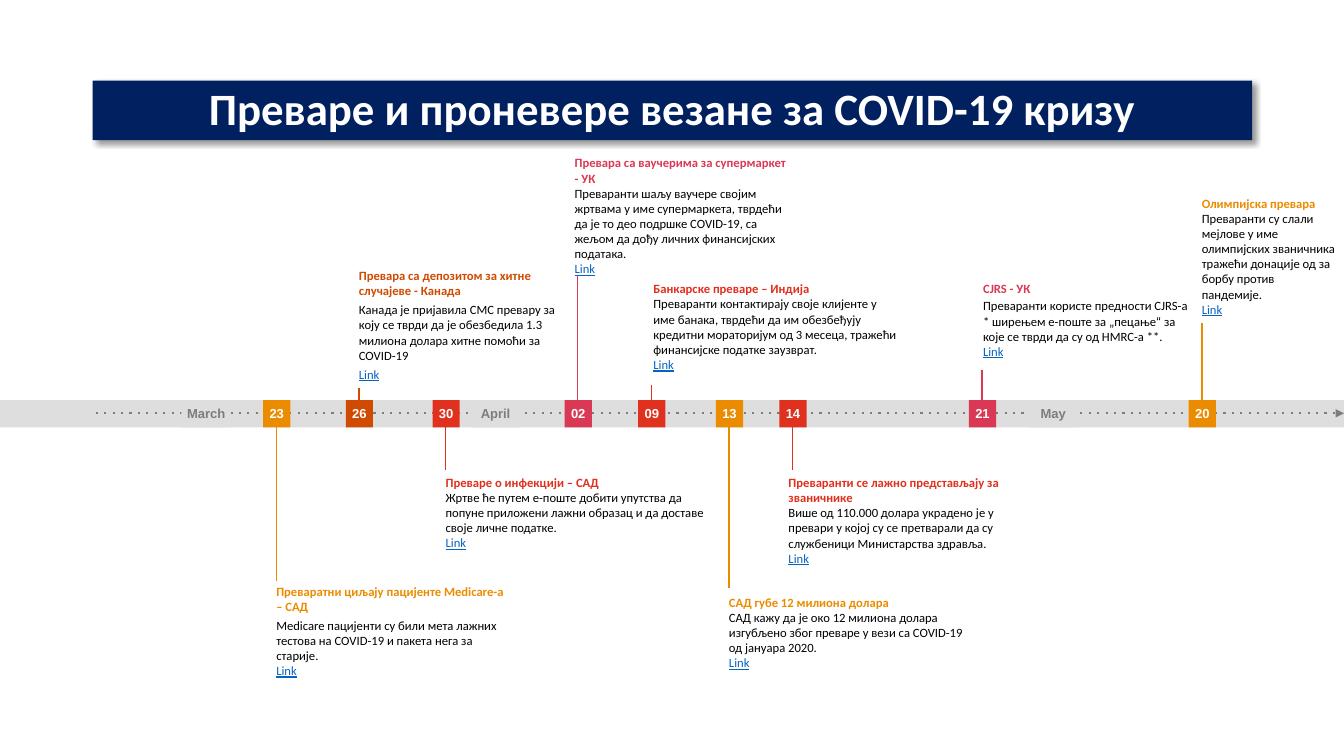
from lxml.etree import SubElement
from pptx import Presentation
from pptx.dml.color import RGBColor
from pptx.enum.shapes import MSO_CONNECTOR, MSO_SHAPE
from pptx.enum.text import MSO_ANCHOR, PP_ALIGN
from pptx.oxml.ns import qn
from pptx.util import Pt

PX = 9144  # 100 px to the inch
NAVY, WHITE, BLACK, LINK_BLUE = "002060", "FFFFFF", "000000", "0563C1"
BAND_GREY, TEXT_GREY = "DEDEDE", "7D7D7D"
AMBER, ORANGE, RED, ROSE = "EB8C00", "D04A02", "E0301E", "D93954"
BAND_TOP, BAND_HEIGHT, AXIS_Y = 397, 27, 410
BAND_BOTTOM = BAND_TOP + BAND_HEIGHT

months = [("March", 180), ("April", 467), ("May", 1020)]

# day, stem x, stem end y, colour, text box (left, top, width, height),
# space before body, space before link (None: same paragraph), title, body
events = [
    ("23", 274, 576, AMBER, (274, 579, 228, 94), 2.7, None,
     "Преваратни циљају пацијенте Medicare-а – САД",
     "Medicare пацијенти су били мета лажних тестова на COVID-19 и пакета нега за старије."),
    ("26", 356, 385, ORANGE, (356, 266, 203, 112), 2.7, 2.7,
     "Превара са депозитом за хитне случајеве - Канада",
     "Канада је пријавила СМС превару за коју се тврди да је обезбедила 1.3 "
     "милиона долара хитне помоћи за COVID-19"),
    ("30", 442, 466, RED, (442, 471, 256, 77), 0, None,
     "Преваре о инфекцији – САД",
     "Жртве ће путем е-поште добити упутства да попуне приложени лажни образац "
     "и да доставе своје личне податке."),
    ("02", 573, 274, ROSE, (570, 154, 213, 118), 0, None,
     "Превара са ваучерима за супермаркет - УК",
     "Преваранти шаљу ваучере својим жртвама у име супермаркета, тврдећи да је то део "
     "подршке COVID-19, са жељом да дођу личних финансијских података."),
    ("09", 646, 382, RED, (648, 279, 241, 94), 0, None,
     "Банкарске преваре – Индија",
     "Преваранти контактирају своје клијенте у име банака, тврдећи да им обезбеђују "
     "кредитни мораторијум од 3 месеца, тражећи финансијске податке заузврат."),
    ("13", 723, 583, AMBER, (723, 590, 238, 94), 0, None,
     "САД губе 12 милиона долара",
     "САД кажу да је око 12 милиона долара изгубљено због преваре у вези са COVID-19 "
     "од јануара 2020."),
    ("14", 786, 466, RED, (782, 471, 235, 99), 0, None,
     "Преваранти се лажно представљају за званичнике",
     "Више од 110.000 долара украдено је у превари у којој су се претварали да су "
     "службеници Министарства здравља."),
    ("21", 974, 367, ROSE, (975, 279, 205, 88), 1.3, None,
     "CJRS - УК",
     "Преваранти користе предности CJRS-a * ширењем е-поште за „пецање“ за које се "
     "тврди да су од HMRC-а **."),
    ("20", 1192, 320, AMBER, (1192, 194, 133, 110), 0, None,
     "Олимпијска превара",
     "Преваранти су слали мејлове у име олимпијских званичника тражећи донације од "
     "за борбу против пандемије."),
]

presentation = Presentation()
presentation.slide_width, presentation.slide_height = 1333 * PX, 750 * PX
slide = presentation.slides.add_slide(presentation.slide_layouts[6])


def add_text(paragraph, text, size, color, font="Calibri", bold=False, underline=False):
    run = paragraph.add_run()
    run.text = text
    run.font.size, run.font.name = Pt(size), font
    run.font.bold, run.font.underline = bold, underline
    run.font.color.rgb = RGBColor.from_string(color)


def add_block(left, top, width, height, fill):
    """Add a borderless rectangle with centred text and no insets."""
    block = slide.shapes.add_shape(
        MSO_SHAPE.RECTANGLE, left * PX, top * PX, width * PX, height * PX)
    block.shadow.inherit = False
    block.fill.solid()
    block.fill.fore_color.rgb = RGBColor.from_string(fill)
    block.line.fill.background()
    frame = block.text_frame
    frame.margin_left = frame.margin_right = frame.margin_top = frame.margin_bottom = 0
    frame.vertical_anchor = MSO_ANCHOR.MIDDLE
    frame.paragraphs[0].alignment = PP_ALIGN.CENTER
    return block


# Title banner
banner = add_block(92, 80, 1150, 59, NAVY)
banner.text_frame.vertical_anchor = MSO_ANCHOR.BOTTOM
banner.text_frame.margin_bottom = 5 * PX
banner.text_frame.paragraphs[0].line_spacing = 0.9
add_text(banner.text_frame.paragraphs[0],
         "Преваре и проневере везане за COVID-19 кризу", 32, WHITE, bold=True)
effects = banner._element.spPr.find(qn("a:effectLst"))
shadow = SubElement(effects, qn("a:outerShdw"), blurRad="50800", dist="38100",
                    dir="2700000", algn="tl", rotWithShape="0")
shadow_color = SubElement(shadow, qn("a:srgbClr"), val=BLACK)
SubElement(shadow_color, qn("a:alpha"), val="40000")

# Time band, axis and stems
add_block(0, BAND_TOP, 1333, BAND_HEIGHT, BAND_GREY)
lines = [(95, AXIS_Y, 1333, AXIS_Y, TEXT_GREY, 1.5)]
for day, x, stem_end, color, *_ in events:
    stem_start = BAND_TOP if stem_end < BAND_TOP else BAND_BOTTOM
    lines.append((x, stem_start, x, stem_end, color, 1))
for x1, y1, x2, y2, color, weight in lines:
    connector = slide.shapes.add_connector(
        MSO_CONNECTOR.STRAIGHT, x1 * PX, y1 * PX, x2 * PX, y2 * PX)
    connector.line.color.rgb = RGBColor.from_string(color)
    connector.line.width = Pt(weight)
    if y1 == y2:
        axis_line = connector.line._get_or_add_ln()
        SubElement(axis_line, qn("a:prstDash"), val="dot")
        SubElement(axis_line, qn("a:tailEnd"), type="triangle")
    SubElement(connector._element.spPr, qn("a:effectLst"))

# Month labels and day markers
labels = [(name, left, 49, BAND_GREY, TEXT_GREY) for name, left in months]
labels += [(day, x - 13, BAND_HEIGHT, color, WHITE) for day, x, _, color, *_ in events]
for label, left, width, fill, color in labels:
    marker = add_block(left, BAND_TOP, width, BAND_HEIGHT, fill)
    add_text(marker.text_frame.paragraphs[0], label, 9.3, color, "Arial", bold=True)

# Event descriptions
for _, _, _, color, box, body_gap, link_gap, title, body in events:
    description = slide.shapes.add_textbox(*(length * PX for length in box)).text_frame
    description.word_wrap = True
    description.margin_left = description.margin_right = 0
    description.margin_top = description.margin_bottom = 0
    add_text(description.paragraphs[0], title, 9, color, bold=True)
    paragraph = description.add_paragraph()
    paragraph.space_before = Pt(body_gap)
    add_text(paragraph, body, 9, BLACK)
    if link_gap is None:
        paragraph.add_line_break()
        SubElement(paragraph._p[-1], qn("a:rPr"), sz="900")
    else:
        paragraph = description.add_paragraph()
        paragraph.space_before = Pt(link_gap)
    add_text(paragraph, "Link", 9, LINK_BLUE, underline=True)

presentation.save("out.pptx")
